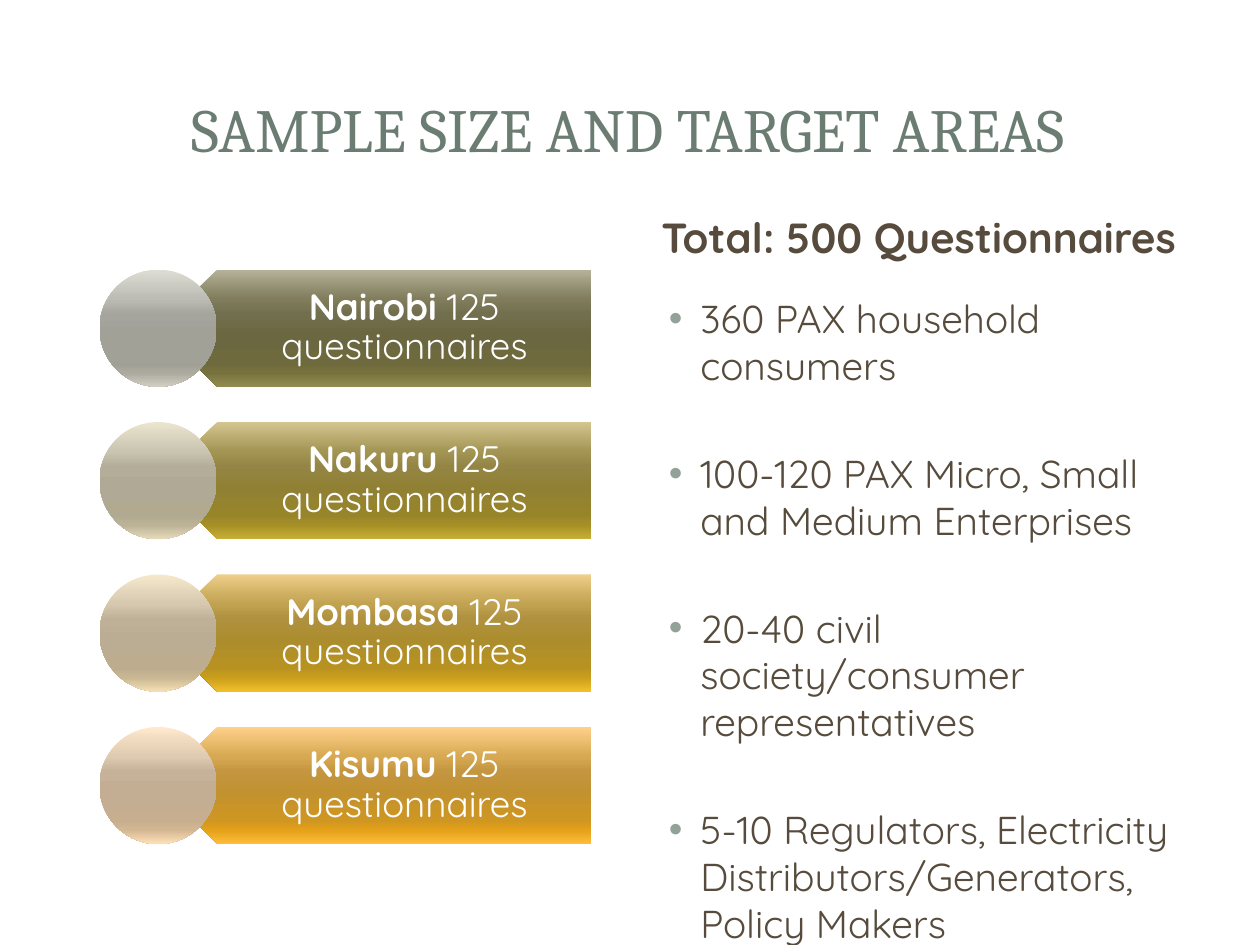
from lxml import etree
from pptx import Presentation
from pptx import util as u
from pptx.dml.color import RGBColor
from pptx.enum import shapes, text
from pptx.oxml.ns import qn

TITLE = "SAMPLE SIZE AND TARGET AREAS"
TOTAL = "Total: 500 Questionnaires"
QUOTA = " 125 questionnaires"
TARGETS = [
    "360 PAX household consumers",
    "100-120 PAX Micro, Small and Medium Enterprises",
    "20-40 civil society/consumer representatives",
    "5-10 Regulators, Electricity Distributors/Generators, Policy Makers",
]
STOPS = [0, 25, 38, 55, 80, 88, 100]
CITIES = [
    ("Nairobi", "B5B299 807C5C 726F4F 6B6741 6E6A3D 77723D 928C50",
     "DEDDD4 BDBCB4 A6A59D A2A198 A2A096 ABA99E D1CFC2"),
    ("Nakuru", "D3C58F A39553 948544 908034 98852A A69026 C8AF37",
     "EBE5CF CAC5B1 B3AD99 AFA995 B1AA91 BCB397 E5DBBA"),
    ("Mombasa", "EECE88 C0A250 AF913F AC8D2E B89221 CA9E1B F3C02A",
     "F7E8CC D6C9B0 BEB198 BAAD93 BDAD8E C9B793 F5E0B5"),
    ("Kisumu", "FFD08A D7A952 C49640 C29230 CF9621 E4A119 FFBD3B",
     "FFE8CC DFCBB1 C6B299 C3AE94 C6AE8E D4B792 FFE0B7"),
]
BODY, HEAD = "Quicksand", "Cambria"
BROWN, SAGE, WHITE, BULLET = "564B3C", "6B7D72", "FFFFFF", "93A299"
TOP, PITCH, SIZE = 2.14, 1.21, 0.93
RIGHT_X, RIGHT_W = 5.08, 4.42


def color(value):
    return RGBColor.from_string(value)


def box(s, at, anchor=text.MSO_ANCHOR.TOP, insets=(0.1, 0.05, 0.1, 0.05)):
    tf = s.shapes.add_textbox(*map(u.Inches, at)).text_frame
    tf.word_wrap = True
    tf.vertical_anchor = anchor
    for side, inset in zip(("left", "top", "right", "bottom"), insets):
        setattr(tf, f"margin_{side}", u.Inches(inset))
    return tf


def write(p, words, size, fill, name=BODY, bold=False):
    r = p.add_run()
    r.text = words
    for key, value in {"size": u.Pt(size), "name": name, "bold": bold}.items():
        setattr(r.font, key, value)
    r.font.color.rgb = color(fill)


def gradient_shape(s, kind, at, colors):
    sp = s.shapes.add_shape(kind, *map(u.Inches, at))
    sp.shadow.inherit = False
    sp.line.fill.background()
    sp.fill.gradient()
    sp.fill.gradient_angle = 270
    stops = sp.element.spPr.find(qn("a:gradFill")).find(qn("a:gsLst"))
    for old in list(stops):
        stops.remove(old)
    for pos, value in zip(STOPS, colors.split()):
        gs = etree.SubElement(stops, qn("a:gs"), pos=str(pos * 1000))
        etree.SubElement(gs, qn("a:srgbClr"), val=value)
    return sp


def add_bullet(p):
    pPr = p._p.get_or_add_pPr()
    pPr.set("marL", str(u.Inches(0.38)))
    pPr.set("indent", str(u.Inches(-0.25)))
    clr = etree.SubElement(pPr, qn("a:buClr"))
    etree.SubElement(clr, qn("a:srgbClr"), val=BULLET)
    etree.SubElement(pPr, qn("a:buFont"), typeface="Arial")
    etree.SubElement(pPr, qn("a:buChar"), char="•")


def add_city(s, row, city, bar_colors, disc_colors):
    y = TOP + row * PITCH
    bar = gradient_shape(s, shapes.MSO_SHAPE.PENTAGON, (1.26, y, 3.43, SIZE), bar_colors)
    bar.element.spPr.find(qn("a:xfrm")).set("flipH", "1")
    tf = box(s, (1.49, y, 3.19, SIZE), text.MSO_ANCHOR.MIDDLE, (0.41, 0.09, 0.16, 0.09))
    p = tf.paragraphs[0]
    p.alignment = text.PP_ALIGN.CENTER
    p.line_spacing = 0.9
    write(p, city, 21, WHITE, bold=True)
    write(p, QUOTA, 21, WHITE)
    gradient_shape(s, shapes.MSO_SHAPE.OVAL, (0.79, y, SIZE, SIZE), disc_colors)


def main():
    prs = Presentation()
    prs.slide_width, prs.slide_height = u.Inches(10), u.Inches(7.5)
    s = prs.slides.add_slide(prs.slide_layouts[6])

    p = box(s, (0.47, 0.45, 9.03, 1.14), text.MSO_ANCHOR.MIDDLE).paragraphs[0]
    p.alignment = text.PP_ALIGN.CENTER
    write(p, TITLE, 35, SAGE, HEAD)

    for row, city in enumerate(CITIES):
        add_city(s, row, *city)

    p = box(s, (RIGHT_X, 1.88, RIGHT_W, 0.7), text.MSO_ANCHOR.BOTTOM,
            (0.1, 0.05, 0.1, 0.5)).paragraphs[0]
    p.alignment = text.PP_ALIGN.CENTER
    write(p, TOTAL, 24, BROWN, bold=True)

    tf = box(s, (RIGHT_X, 2.29, RIGHT_W, 4.6))
    for i, words in enumerate(TARGETS):
        p = tf.add_paragraph() if i else tf.paragraphs[0]
        add_bullet(p)
        p.line_spacing = u.Pt(26.8)
        if i:
            p.space_before = u.Pt(34.8)
        write(p, words, 22.2, BROWN)

    prs.save("out.pptx")


if __name__ == "__main__":
    main()
